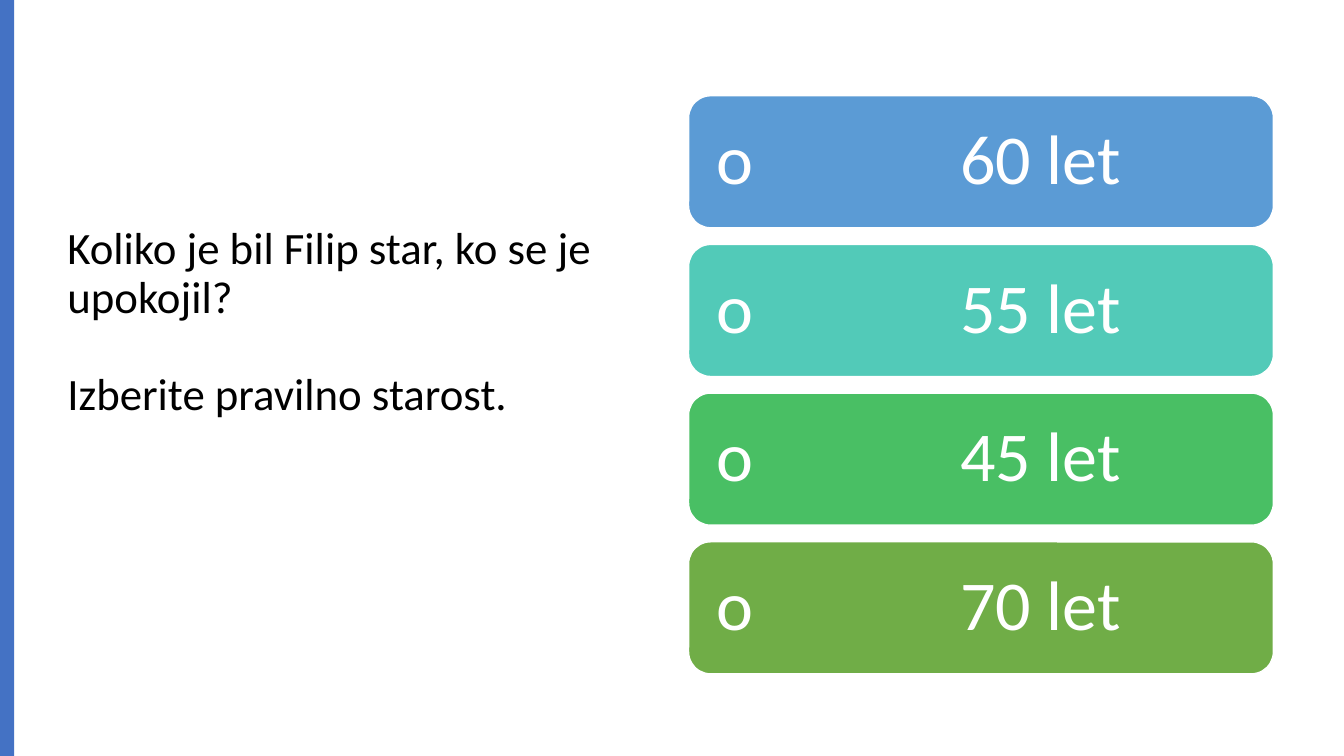
from lxml.etree import SubElement
from pptx import Presentation
from pptx.dml.color import RGBColor
from pptx.enum.shapes import MSO_SHAPE
from pptx.enum.text import MSO_ANCHOR, PP_ALIGN
from pptx.oxml.ns import qn
from pptx.util import Inches, Pt

WHITE = RGBColor(0xFF, 0xFF, 0xFF)
BLACK = RGBColor(0x00, 0x00, 0x00)
STRIPE = RGBColor(0x44, 0x72, 0xC4)
BLUE = RGBColor(0x5B, 0x9B, 0xD5)
TEAL = RGBColor(0x52, 0xCA, 0xB8)
GREEN = RGBColor(0x49, 0xBF, 0x64)
OLIVE = RGBColor(0x70, 0xAD, 0x47)

WIDTH, HEIGHT = 13.33, 7.5
ANSWER_LEFT, ANSWER_TOP = 6.83, 0.95
ANSWER_WIDTH, ANSWER_HEIGHT = 5.8, 1.31
ROW_PITCH = 1.475
ANSWER_TAB = 2.42

QUESTION = ["Koliko je bil Filip star, ko se je upokojil?", "Izberite pravilno starost."]
ANSWERS = [("60 let", BLUE), ("55 let", TEAL), ("45 let", GREEN), ("70 let", OLIVE)]
QUESTION_FONT = {"name": "Calibri", "size": Pt(32)}
ANSWER_FONT = {"name": "Calibri", "size": Pt(50)}
QUESTION_FRAME = {"word_wrap": True, "vertical_anchor": MSO_ANCHOR.MIDDLE,
                  "margin_bottom": Inches(1.02)}
ANSWER_FRAME = {"word_wrap": True, "vertical_anchor": MSO_ANCHOR.MIDDLE,
                "margin_left": Inches(0.21), "margin_right": Inches(0.21),
                "margin_top": Inches(0.21), "margin_bottom": Inches(0.21)}


def apply(target, values):
    for name, value in values.items():
        setattr(target, name, value)


def add_block(s, kind, box, fill, line=None):
    sp = s.shapes.add_shape(kind, *map(Inches, box))
    sp.shadow.inherit = False
    sp.fill.solid()
    sp.fill.fore_color.rgb = fill
    if line is None:
        sp.line.fill.background()
    else:
        sp.line.color.rgb = line
        sp.line.width = Pt(1)
    return sp


def write(tf, frame, lines, font, color, gap=0):
    apply(tf, frame)
    for i, line in enumerate(lines):
        p = tf.add_paragraph() if i else tf.paragraphs[0]
        apply(p, {"alignment": PP_ALIGN.LEFT, "line_spacing": 0.9,
                  "space_before": Pt(gap if i else 0)})
        r = p.add_run()
        r.text = line
        apply(r.font, font)
        r.font.color.rgb = color


def add_tab(p, position):
    tabs = SubElement(p._p.get_or_add_pPr(), qn("a:tabLst"))
    SubElement(tabs, qn("a:tab"), pos=str(Inches(position)), algn="l")


def add_question(s):
    box = s.shapes.add_textbox(*map(Inches, (0.57, 0.68, 5.67, 6.02)))
    write(box.text_frame, QUESTION_FRAME, QUESTION, QUESTION_FONT, BLACK, gap=35)


def add_answer(s, row, text, fill):
    box = (ANSWER_LEFT, ANSWER_TOP + row * ROW_PITCH, ANSWER_WIDTH, ANSWER_HEIGHT)
    sp = add_block(s, MSO_SHAPE.ROUNDED_RECTANGLE, box, fill, WHITE)
    write(sp.text_frame, ANSWER_FRAME, [f"o\t{text}"], ANSWER_FONT, WHITE)
    add_tab(sp.text_frame.paragraphs[0], ANSWER_TAB)


def main():
    prs = Presentation()
    apply(prs, {"slide_width": Inches(WIDTH), "slide_height": Inches(HEIGHT)})
    s = prs.slides.add_slide(prs.slide_layouts[6])
    add_question(s)
    add_block(s, MSO_SHAPE.RECTANGLE, (0, 0, 0.14, HEIGHT), STRIPE)
    for row, (text, fill) in enumerate(ANSWERS):
        add_answer(s, row, text, fill)
    prs.save("out.pptx")


if __name__ == "__main__":
    main()
